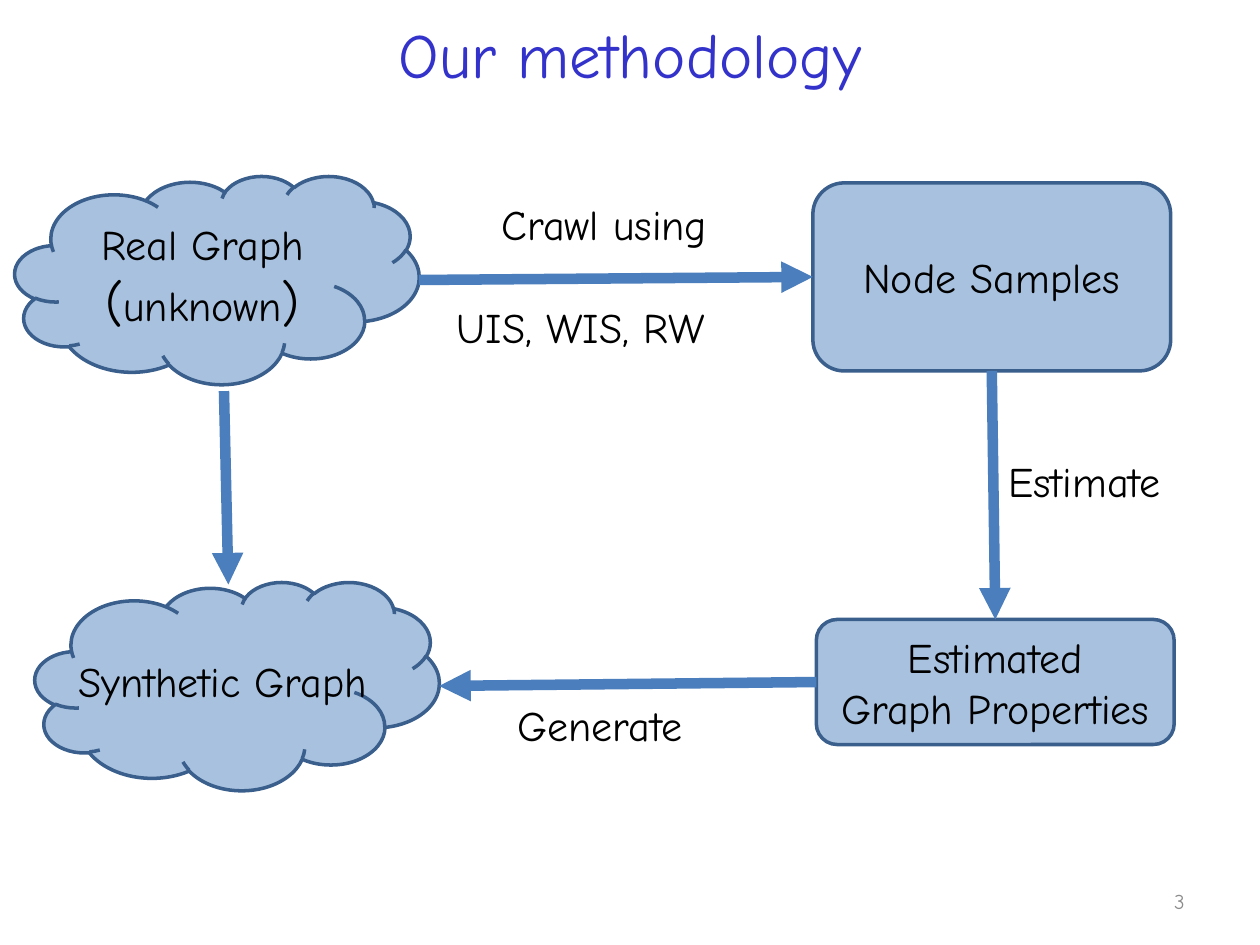
from lxml import etree
from pptx import Presentation
from pptx.dml.color import RGBColor
from pptx.enum.shapes import MSO_CONNECTOR, MSO_SHAPE
from pptx.enum.text import MSO_ANCHOR, PP_ALIGN
from pptx.oxml.ns import qn
from pptx.util import Pt

CLOUD, BOX = MSO_SHAPE.CLOUD, MSO_SHAPE.ROUNDED_RECTANGLE
STRAIGHT = MSO_CONNECTOR.STRAIGHT
MIDDLE, TOP = MSO_ANCHOR.MIDDLE, MSO_ANCHOR.TOP
LEFT, CENTER, RIGHT = PP_ALIGN.LEFT, PP_ALIGN.CENTER, PP_ALIGN.RIGHT
SITE_TOP, SITE_LEFT, SITE_BOTTOM = 0, 1, 2

FONT = "Comic Neue"
COLORS = {
    "title": "3333CC",
    "text": "000000",
    "number": "8C8C8C",
    "fill": "4F81BD",
    "outline": "3A5F8C",
    "arrow": "4B7EBC",
}


def color(name):
    return RGBColor.from_string(COLORS[name])


def format_run(r, size, name):
    r.font.name = FONT
    r.font.size = Pt(size)
    r.font.color.rgb = color(name)


def set_text(tf, text, size=24, name="text", align=LEFT, anchor=TOP):
    tf.text = text
    tf.vertical_anchor = anchor
    for p in tf.paragraphs:
        p.alignment = align
        for r in p.runs:
            format_run(r, size, name)


def add_title(s, text):
    sp = s.shapes.title
    sp.left, sp.top, sp.width, sp.height = Pt(36), Pt(-1.5), Pt(648), Pt(90)
    set_text(sp.text_frame, text, 36, "title", CENTER, MIDDLE)
    sp.text_frame.margin_bottom = Pt(30)


def add_label(s, text, x, y, w, h=36, **style):
    sp = s.shapes.add_textbox(Pt(x), Pt(y), Pt(w), Pt(h))
    sp.text_frame.word_wrap = True
    set_text(sp.text_frame, text, **style)


def add_node(s, kind, text, x, y, w, h):
    sp = s.shapes.add_shape(kind, Pt(x), Pt(y), Pt(w), Pt(h))
    sp.shadow.inherit = False
    sp.fill.solid()
    sp.fill.fore_color.rgb = color("fill")
    srgb = sp.fill._xPr.find(qn("a:solidFill")).find(qn("a:srgbClr"))
    etree.SubElement(srgb, qn("a:alpha"), val="49000")
    sp.line.color.rgb = color("outline")
    sp.line.width = Pt(2)
    sp.text_frame.word_wrap = False
    set_text(sp.text_frame, text, align=CENTER, anchor=MIDDLE)
    return sp


def enlarge_brackets(p, size):
    """Split the bracketed text into runs, with larger brackets."""
    word = p.text.strip("()")
    p.text = ""
    for text, points in (("(", size), (word, 24), (")", size)):
        r = p.add_run()
        r.text = text
        format_run(r, points, "text")


def add_arrow(s, x1, y1, x2, y2, begin=None, end=None):
    """begin and end are optional (shape, connection site) pairs."""
    c = s.shapes.add_connector(STRAIGHT, Pt(x1), Pt(y1), Pt(x2), Pt(y2))
    if begin:
        c.begin_connect(*begin)
    if end:
        c.end_connect(*end)
    c.line.color.rgb = color("arrow")
    c.line.width = Pt(6)
    etree.SubElement(c.line._get_or_add_ln(), qn("a:tailEnd"), type="triangle")
    etree.SubElement(c._element.spPr, qn("a:effectLst"))


def main():
    prs = Presentation()
    prs.slide_width, prs.slide_height = Pt(720), Pt(540)
    s = prs.slides.add_slide(prs.slide_layouts[5])
    add_title(s, "Our methodology")
    add_label(s, "3", 516, 500.5, 168, 28.75, size=12, name="number",
              align=RIGHT, anchor=MIDDLE)

    samples = add_node(s, BOX, "Node Samples", 464.5, 104.5, 204.5, 107.5)
    add_node(s, CLOUD, "Synthetic Graph", 20, 332.5, 231, 119)
    real = add_node(s, CLOUD, "Real Graph\n(unknown)", 8.5, 100.5, 231, 119)
    enlarge_brackets(real.text_frame.paragraphs[1], 30)
    estimated = add_node(s, BOX, "Estimated\nGraph Properties",
                         466.5, 354, 204.5, 71.5)

    add_arrow(s, 239.5, 160, 464.5, 158, end=(samples, SITE_LEFT))
    add_arrow(s, 567, 212, 569, 354, begin=(samples, SITE_BOTTOM),
              end=(estimated, SITE_TOP))
    add_arrow(s, 466.5, 390, 251, 392, begin=(estimated, SITE_LEFT))
    add_arrow(s, 128, 223.5, 130.5, 334)

    add_label(s, "Crawl using", 279.5, 110, 199.5)
    add_label(s, "UIS, WIS, RW", 254, 169, 213)
    add_label(s, "Estimate", 569, 257, 151)
    add_label(s, "Generate", 288.5, 396, 144)
    prs.save("out.pptx")


if __name__ == "__main__":
    main()
